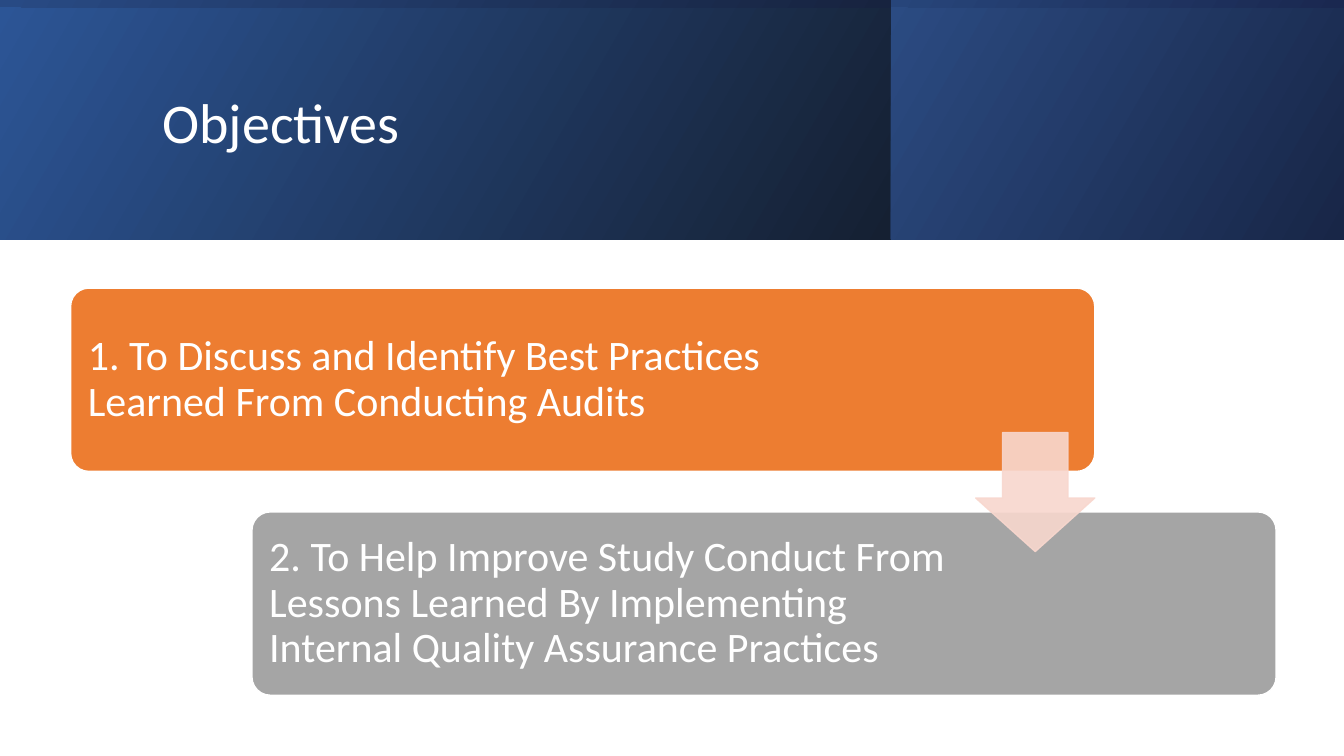
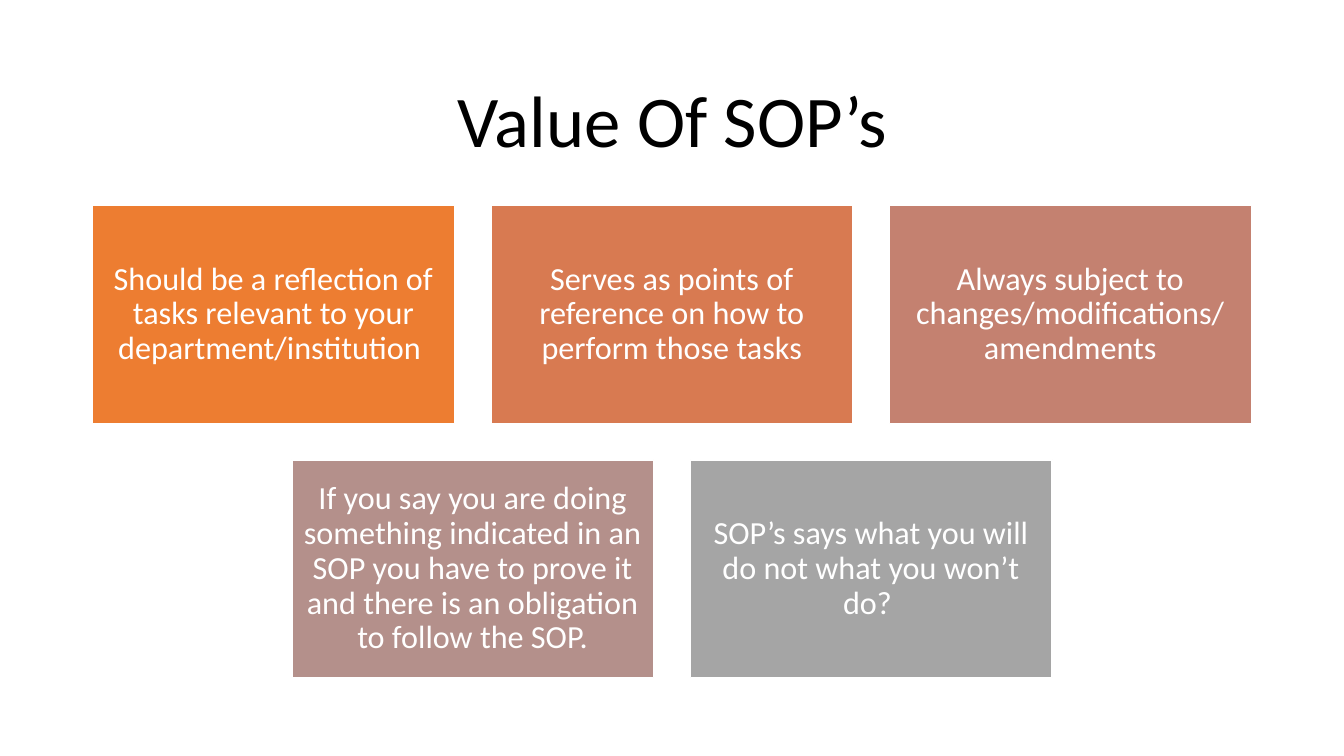
from dataclasses import dataclass

from lxml.etree import SubElement
from pptx import Presentation
from pptx.dml.color import RGBColor
from pptx.enum.shapes import MSO_SHAPE
from pptx.enum.text import MSO_ANCHOR, MSO_AUTO_SIZE, PP_ALIGN
from pptx.oxml.ns import qn
from pptx.util import Cm, Pt

FONT = "Calibri"
WHITE, BLACK = "FFFFFF", "000000"
ORANGE, GRAY, BLUSH = "ED7D31", "A5A5A5", "F8D7CE"
SLIDE_W, SLIDE_H = 33.87, 19.05
BAND_H = 6.03


@dataclass(frozen=True)
class Box:
    x: float
    y: float
    w: float
    h: float


@dataclass(frozen=True)
class Panel:
    box: Box
    start: str
    end: str


@dataclass(frozen=True)
class Card:
    text: str
    color: str


@dataclass(frozen=True)
class Objective:
    card: Card
    box: Box
    right: float


PANELS = [
    Panel(Box(0, 0, 22.45, BAND_H), "2C5596", "152032"),
    Panel(Box(22.45, 0, SLIDE_W - 22.45, BAND_H), "2B4B82", "182647"),
    Panel(Box(0, 0, 22.45, 0.18), "284A84", "17233F"),
    Panel(Box(22.45, 0, SLIDE_W - 22.45, 0.18), "27457A", "1A2850"),
]

OBJECTIVES = [
    Objective(
        Card("1. To Discuss and Identify Best Practices Learned From "
             "Conducting Audits", ORANGE),
        Box(1.78, 7.26, 25.81, 4.62), 4.8),
    Objective(
        Card("2. To Help Improve Study Conduct From Lessons Learned By "
             "Implementing Internal Quality Assurance Practices", GRAY),
        Box(6.35, 12.9, 25.81, 4.62), 7.85),
]

SOP_ROWS = [
    [
        Card("Should be a reflection of tasks relevant to your "
             "department/institution ", ORANGE),
        Card("Serves as points of reference on how to perform those tasks",
             "D87A51"),
        Card("Always subject to changes/modifications/ amendments", "C48170"),
    ],
    [
        Card("If you say you are doing something indicated in an SOP you have "
             "to prove it and there is an obligation to follow the SOP.",
             "B4908B"),
        Card("SOP’s says what you will do not what you won’t do? ", GRAY),
    ],
]


def rgb(color: str) -> RGBColor:
    return RGBColor.from_string(color)


def place(box: Box) -> tuple:
    return Cm(box.x), Cm(box.y), Cm(box.w), Cm(box.h)


def write(tf, text: str, size: float, color: str, align=PP_ALIGN.LEFT) -> None:
    tf.word_wrap = True
    tf.auto_size = MSO_AUTO_SIZE.NONE
    tf.vertical_anchor = MSO_ANCHOR.MIDDLE
    p = tf.paragraphs[0]
    p.alignment = align
    p.line_spacing = 0.9
    r = p.add_run()
    r.text = text
    r.font.name = FONT
    r.font.size = Pt(size)
    r.font.color.rgb = rgb(color)


def add_title(s, text: str, box: Box, size: float, color: str,
              align=PP_ALIGN.LEFT) -> None:
    title = s.shapes.title
    title.left, title.top, title.width, title.height = place(box)
    write(title.text_frame, text, size, color, align)


def add_panel(s, panel: Panel) -> None:
    sp = s.shapes.add_shape(MSO_SHAPE.RECTANGLE, *place(panel.box))
    sp.shadow.inherit = False
    sp.line.fill.background()
    sp.fill.gradient()
    sp.fill.gradient_angle = 330
    for stop, color, pos in zip(sp.fill.gradient_stops,
                                (panel.start, panel.end), (0, 1)):
        stop.color.rgb = rgb(color)
        stop.position = pos


def add_solid(s, kind, box: Box, fill: str, line: str):
    sp = s.shapes.add_shape(kind, *place(box))
    sp.shadow.inherit = False
    sp.fill.solid()
    sp.fill.fore_color.rgb = rgb(fill)
    sp.line.color.rgb = rgb(line)
    sp.line.width = Pt(1)
    return sp


def add_card(s, kind, card: Card, box: Box, size: float, align,
             left: float, right: float):
    sp = add_solid(s, kind, box, card.color, WHITE)
    tf = sp.text_frame
    tf.margin_left, tf.margin_right = Cm(left), Cm(right)
    tf.margin_top = tf.margin_bottom = Cm(0.25)
    write(tf, card.text, size, WHITE, align)
    return sp


def add_arrow(s, box: Box) -> None:
    sp = add_solid(s, MSO_SHAPE.DOWN_ARROW, box, BLUSH, BLUSH)
    sp.adjustments[0] = 0.55
    sp.adjustments[1] = 0.45
    for clr in sp._element.spPr.iter(qn("a:srgbClr")):
        SubElement(clr, qn("a:alpha")).set("val", "90000")


def build_objectives(prs) -> None:
    s = prs.slides.add_slide(prs.slide_layouts[5])
    for panel in PANELS:
        add_panel(s, panel)
    title = s.shapes.title._element
    s.shapes._spTree.append(title)
    add_title(s, "Objectives", Box(3.84, 0.97, 27, 4.37), 40, WHITE)
    for item in OBJECTIVES:
        sp = add_card(s, MSO_SHAPE.ROUNDED_RECTANGLE, item.card, item.box, 30,
                      PP_ALIGN.LEFT, 0.3, item.right)
        sp.adjustments[0] = 0.1
    add_arrow(s, Box(24.59, 10.9, 3, 3))


def build_sops(prs) -> None:
    w, h, gap, top = 9.12, 5.49, 0.92, 5.18
    s = prs.slides.add_slide(prs.slide_layouts[5])
    add_title(s, "Value Of SOP’s", Box(2.34, 1.55, 29.21, 3.15), 52, BLACK,
              PP_ALIGN.CENTER)
    for i, row in enumerate(SOP_ROWS):
        left = (SLIDE_W - len(row) * w - (len(row) - 1) * gap) / 2
        for j, card in enumerate(row):
            box = Box(left + j * (w + gap), top + i * (h + gap), w, h)
            add_card(s, MSO_SHAPE.RECTANGLE, card, box, 23, PP_ALIGN.CENTER,
                     0.25, 0.25)


def main() -> None:
    prs = Presentation()
    prs.slide_width, prs.slide_height = Cm(SLIDE_W), Cm(SLIDE_H)
    build_objectives(prs)
    build_sops(prs)
    prs.save("out.pptx")


if __name__ == "__main__":
    main()
